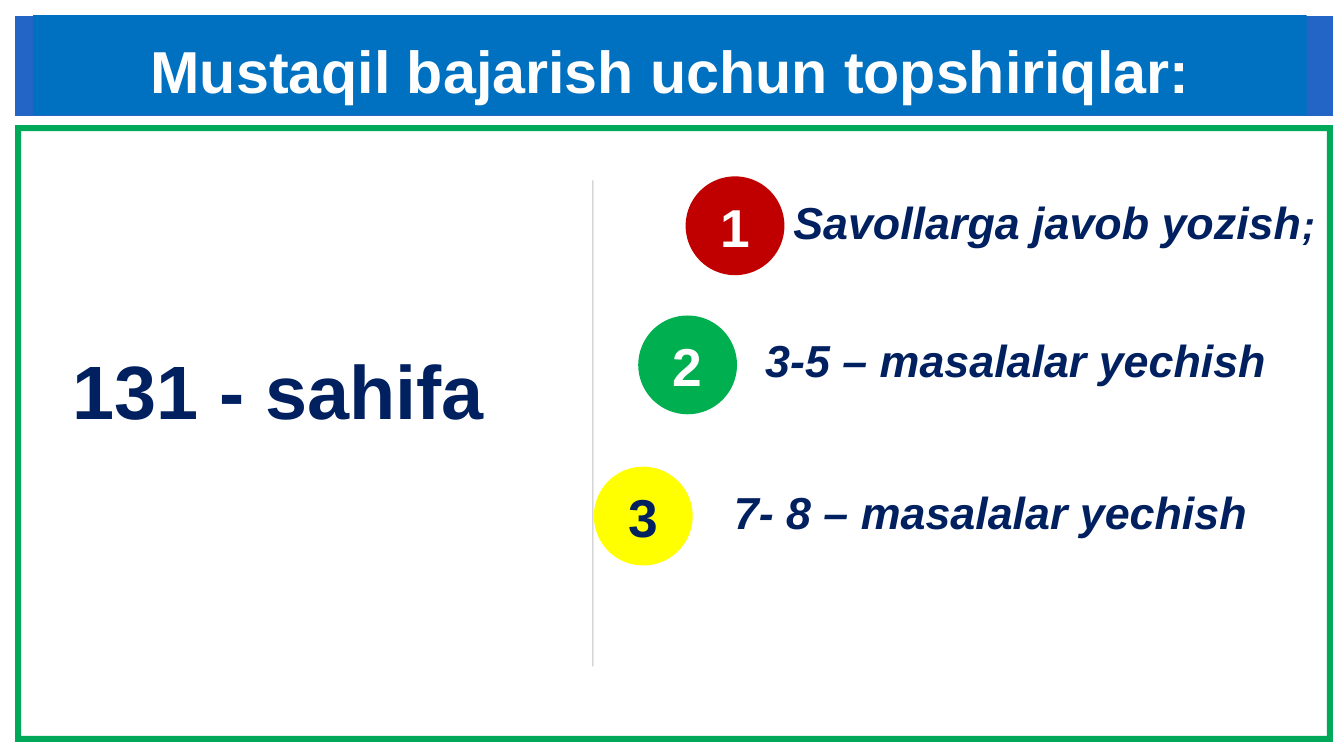
from dataclasses import dataclass

from lxml import etree
from pptx import Presentation
from pptx.dml.color import RGBColor
from pptx.enum.shapes import MSO_CONNECTOR, MSO_SHAPE
from pptx.enum.text import MSO_ANCHOR, PP_ALIGN
from pptx.oxml.ns import qn
from pptx.util import Inches, Pt

RECTANGLE = MSO_SHAPE.RECTANGLE
OVAL = MSO_SHAPE.OVAL
STRAIGHT = MSO_CONNECTOR.STRAIGHT
MIDDLE = MSO_ANCHOR.MIDDLE
TOP = MSO_ANCHOR.TOP
LEFT = PP_ALIGN.LEFT
CENTER = PP_ALIGN.CENTER


@dataclass(frozen=True)
class Theme:
    font: str = "Arial"
    frame: str = "00A859"
    band: str = "2365C7"
    title_fill: str = "0070C0"
    title_text: str = "FEFEFE"
    navy: str = "002060"
    white: str = "FFFFFF"
    red: str = "C00000"
    green: str = "00B050"
    yellow: str = "FFFF00"
    divider: str = "7F7F7F"
    title_size: float = 42.3
    page_size: float = 54
    badge_size: float = 38.1
    task_size: float = 32
    mark_size: float = 28


class TaskSlide:
    def __init__(self, page, theme):
        self.page = page
        self.theme = theme

    def paint(self, shape, color):
        shape.shadow.inherit = False
        shape.fill.solid()
        shape.fill.fore_color.rgb = RGBColor.from_string(color)
        shape.line.fill.background()

    def shape(self, kind, left, top, width, height, color):
        shape = self.page.shapes.add_shape(
            kind, Inches(left), Inches(top), Inches(width), Inches(height))
        self.paint(shape, color)
        return shape

    def frame(self, left, top, width, height, edge, color):
        """Draw a hollow border as an outer and an inner contour."""
        builder = None
        for inset in (0, edge):
            x1, y1 = Inches(left + inset), Inches(top + inset)
            x2, y2 = Inches(left + width - inset), Inches(top + height - inset)
            if builder is None:
                builder = self.page.shapes.build_freeform(x1, y1)
            else:
                builder.move_to(x1, y1)
            builder.add_line_segments([(x2, y1), (x2, y2), (x1, y2)], close=True)
        self.paint(builder.convert_to_shape(), color)

    def set_text(self, shape, text, size, color, align=LEFT, anchor=TOP,
                 italic=False, wrap=True):
        text_frame = shape.text_frame
        text_frame.text = text
        text_frame.word_wrap = wrap
        text_frame.vertical_anchor = anchor
        para = text_frame.paragraphs[0]
        para.alignment = align
        self.style(para.runs[0], size, color, italic)
        return para

    def style(self, span, size, color, italic=False):
        span.font.name = self.theme.font
        span.font.size = Pt(size)
        span.font.bold = True
        span.font.italic = italic
        span.font.color.rgb = RGBColor.from_string(color)

    def title(self, text):
        box = self.shape(RECTANGLE, 0.33, 0.15, 12.63, 0.99, self.theme.title_fill)
        text_frame = box.text_frame
        text_frame.margin_left = text_frame.margin_right = text_frame.margin_bottom = 0
        text_frame.margin_top = Inches(0.1)
        self.set_text(box, text, self.theme.title_size, self.theme.title_text,
                      CENTER, MIDDLE)

    def text(self, left, top, width, height, text, size, **options):
        box = self.page.shapes.add_textbox(
            Inches(left), Inches(top), Inches(width), Inches(height))
        return self.set_text(box, text, size, self.theme.navy, **options)

    def badge(self, left, top, number, fill, color):
        circle = self.shape(OVAL, left, top, 0.98, 0.98, fill)
        self.set_text(circle, str(number), self.theme.badge_size, color, CENTER, MIDDLE)

    def divider(self, x, top, bottom):
        line = self.page.shapes.add_connector(
            STRAIGHT, Inches(x), Inches(top), Inches(x), Inches(bottom))
        line.line.width = Pt(0.75)
        line.line.color.rgb = RGBColor.from_string(self.theme.divider)
        properties = line.element.spPr
        color = properties.find(".//" + qn("a:srgbClr"))
        etree.SubElement(color, qn("a:alpha"), val="50000")
        etree.SubElement(properties, qn("a:effectLst"))


def main():
    deck = Presentation()
    deck.slide_width, deck.slide_height = Inches(13.33), Inches(7.5)
    theme = Theme()
    slide = TaskSlide(deck.slides.add_slide(deck.slide_layouts[6]), theme)

    slide.frame(0.15, 1.24, 13.07, 6.12, 0.06, theme.frame)
    slide.shape(RECTANGLE, 0.15, 0.16, 13.07, 0.99, theme.band)
    slide.title("Mustaqil bajarish uchun topshiriqlar:")
    slide.divider(5.88, 1.79, 6.61)
    slide.text(0.62, 3.36, 4.88, 1.01, "131 - sahifa", theme.page_size)

    badges = [
        (6.8, 1.75, theme.red, theme.white),
        (6.33, 3.13, theme.green, theme.white),
        (5.89, 4.63, theme.yellow, theme.navy),
    ]
    for number, (left, top, fill, color) in enumerate(badges, start=1):
        slide.badge(left, top, number, fill, color)

    tasks = [
        (7.77, 1.88, 5.5, "Savollarga javob yozish", LEFT, True),
        (7.47, 3.25, 5.21, "3-5 – masalalar yechish", CENTER, False),
        (7.18, 4.76, 5.79, "7- 8 – masalalar yechish", LEFT, True),
    ]
    paras = [
        slide.text(left, top, width, 0.64, text, theme.task_size,
                   align=align, italic=True, wrap=wrap)
        for left, top, width, text, align, wrap in tasks
    ]
    mark = paras[0].add_run()
    mark.text = ";"
    slide.style(mark, theme.mark_size, theme.navy, italic=True)

    deck.save("out.pptx")


if __name__ == "__main__":
    main()
